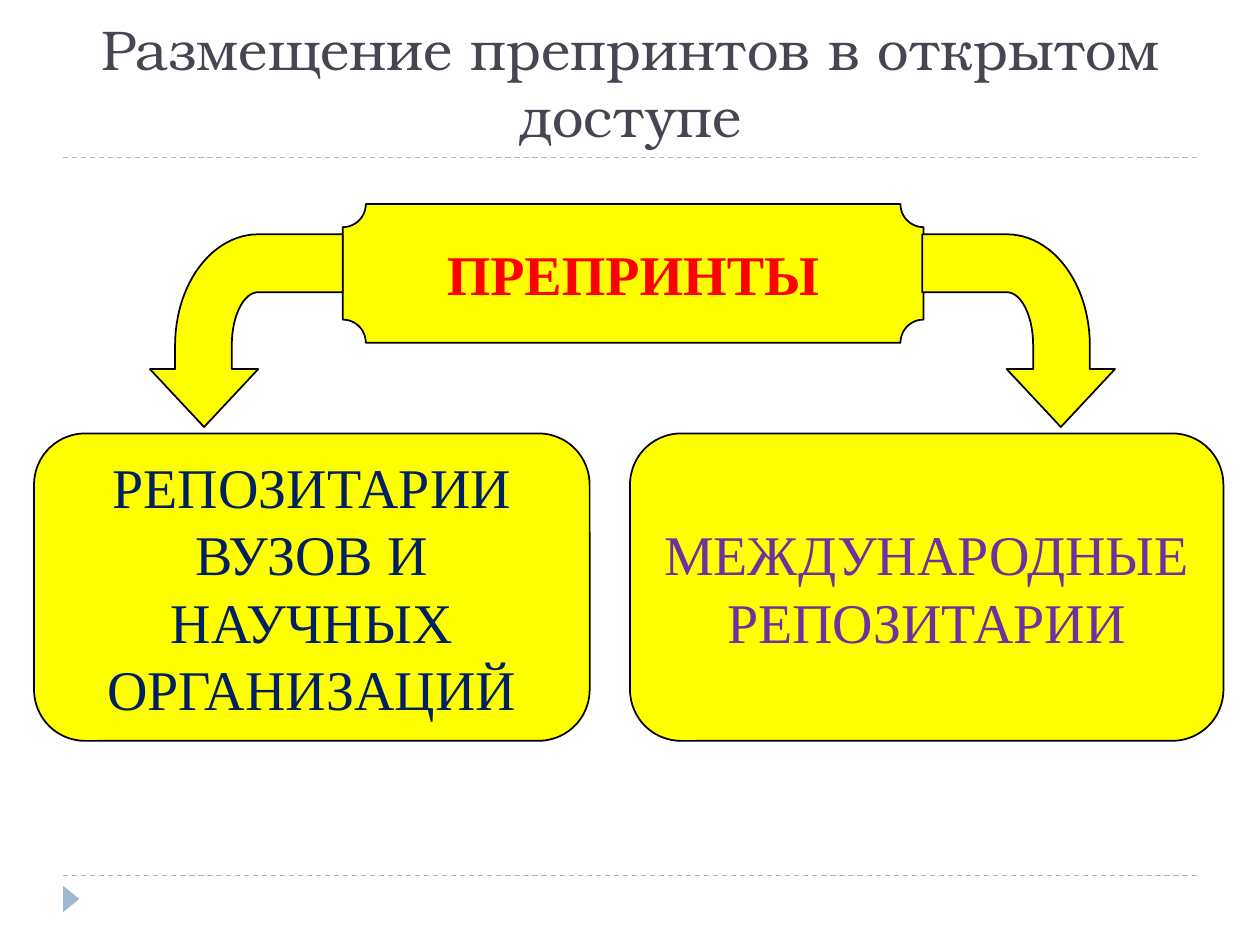
import math
from dataclasses import dataclass

from lxml import etree
from pptx import Presentation
from pptx import util as u
from pptx.dml.color import RGBColor
from pptx.enum import dml, shapes, text
from pptx.oxml.ns import qn


@dataclass(frozen=True)
class Theme:
    title_font: str = "TeX Gyre Bonum"
    body_font: str = "Times New Roman"
    size: float = 32
    title: str = "464653"
    accent: str = "9FB8CD"
    fill: str = "FFFF00"
    outline: str = "000000"
    red: str = "FF0000"
    purple: str = "7030A0"
    navy: str = "002060"


@dataclass(frozen=True)
class Box:
    kind: shapes.MSO_SHAPE
    left: float
    top: float
    width: float
    height: float
    label: str
    color: str
    bold: bool = False


THEME = Theme()
ROUND = shapes.MSO_SHAPE.ROUNDED_RECTANGLE
BOXES = [
    Box(ROUND, 5, 3.44, 4.71, 2.44, "МЕЖДУНАРОДНЫЕ РЕПОЗИТАРИИ", THEME.purple),
    Box(shapes.MSO_SHAPE.PLAQUE, 2.72, 1.62, 4.61, 1.1, "ПРЕПРИНТЫ", THEME.red, True),
    Box(ROUND, 0.27, 3.44, 4.41, 2.44,
        "РЕПОЗИТАРИИ ВУЗОВ И НАУЧНЫХ ОРГАНИЗАЦИЙ", THEME.navy),
]
RULE_TOPS = (1.25, 6.95)
AXIS = 5.02  # the two bent arrows mirror each other about this x
ARC_STEPS = 24


def rgb(color: str) -> RGBColor:
    return RGBColor.from_string(color)


def paint(sp, fill: str, line: str | None = None) -> None:
    sp.shadow.inherit = False
    sp.fill.solid()
    sp.fill.fore_color.rgb = rgb(fill)
    if line is None:
        sp.line.fill.background()
    else:
        sp.line.color.rgb = rgb(line)
        sp.line.width = u.Pt(1)


def write(sp, label: str, font: str, color: str, anchor, bold: bool = False) -> None:
    tf = sp.text_frame
    tf.word_wrap = True
    tf.auto_size = text.MSO_AUTO_SIZE.NONE
    tf.vertical_anchor = anchor
    p = tf.paragraphs[0]
    p.text = label
    p.alignment = text.PP_ALIGN.CENTER
    p.font.name, p.font.size, p.font.bold = font, u.Pt(THEME.size), bold
    p.font.color.rgb = rgb(color)


def draw_rule(s, top: float) -> None:
    line = s.shapes.add_connector(shapes.MSO_CONNECTOR.STRAIGHT, u.Inches(0.5),
                                  u.Inches(top), u.Inches(9.5), u.Inches(top))
    line.line.color.rgb = rgb(THEME.accent)
    line.line.width = u.Pt(0.75)
    line.line.dash_style = dml.MSO_LINE.DASH
    etree.SubElement(line._element.spPr, qn("a:effectLst"))


def draw_box(s, box: Box) -> None:
    sp = s.shapes.add_shape(box.kind, *map(u.Inches, (box.left, box.top, box.width, box.height)))
    paint(sp, THEME.fill, THEME.outline)
    write(sp, box.label, THEME.body_font, box.color, text.MSO_ANCHOR.MIDDLE, box.bold)


def quarter(rx: float, ry: float) -> list[tuple[float, float]]:
    """Quarter ellipse of the bend, from its right end up to its top."""
    angles = [math.pi / 2 * i / ARC_STEPS for i in range(ARC_STEPS + 1)]
    return [(7.99 + rx * math.cos(a), 2.74 - ry * math.sin(a)) for a in angles]


def draw_bent_arrow(s, mirrored: bool) -> None:
    points = [(8.42, 3.39), (8.85, 2.93), (8.65, 2.93), *quarter(0.66, 0.88),
              (7.32, 1.86), (7.32, 2.32), *reversed(quarter(0.21, 0.42)),
              (8.2, 2.93), (7.99, 2.93)]
    if mirrored:
        points = [(2 * AXIS - x, y) for x, y in points]
    points = [(u.Inches(x), u.Inches(y)) for x, y in points]
    builder = s.shapes.build_freeform(*points[0])
    builder.add_line_segments(points[1:], close=True)
    paint(builder.convert_to_shape(), THEME.fill, THEME.outline)


def main() -> None:
    prs = Presentation()
    prs.slide_width, prs.slide_height = u.Inches(10), u.Inches(7.5)
    s = prs.slides.add_slide(prs.slide_layouts[5])

    # Rules and corner marker
    for top in RULE_TOPS:
        draw_rule(s, top)
    marker = s.shapes.add_shape(shapes.MSO_SHAPE.ISOSCELES_TRIANGLE,
                                *map(u.Inches, (0.46, 7.07, 0.21, 0.13)))
    marker.rotation = 90
    paint(marker, THEME.accent)

    # Scheme: preprints lead to two kinds of repository
    for box in BOXES:
        draw_box(s, box)
    for mirrored in (False, True):
        draw_bent_arrow(s, mirrored)

    # Title
    title = s.shapes.title
    title.left, title.top, title.width, title.height = map(u.Inches, (0.28, 0.13, 9.45, 1.1))
    write(title, "Размещение препринтов в открытом доступе",
          THEME.title_font, THEME.title, text.MSO_ANCHOR.BOTTOM)

    prs.save("out.pptx")


if __name__ == "__main__":
    main()
